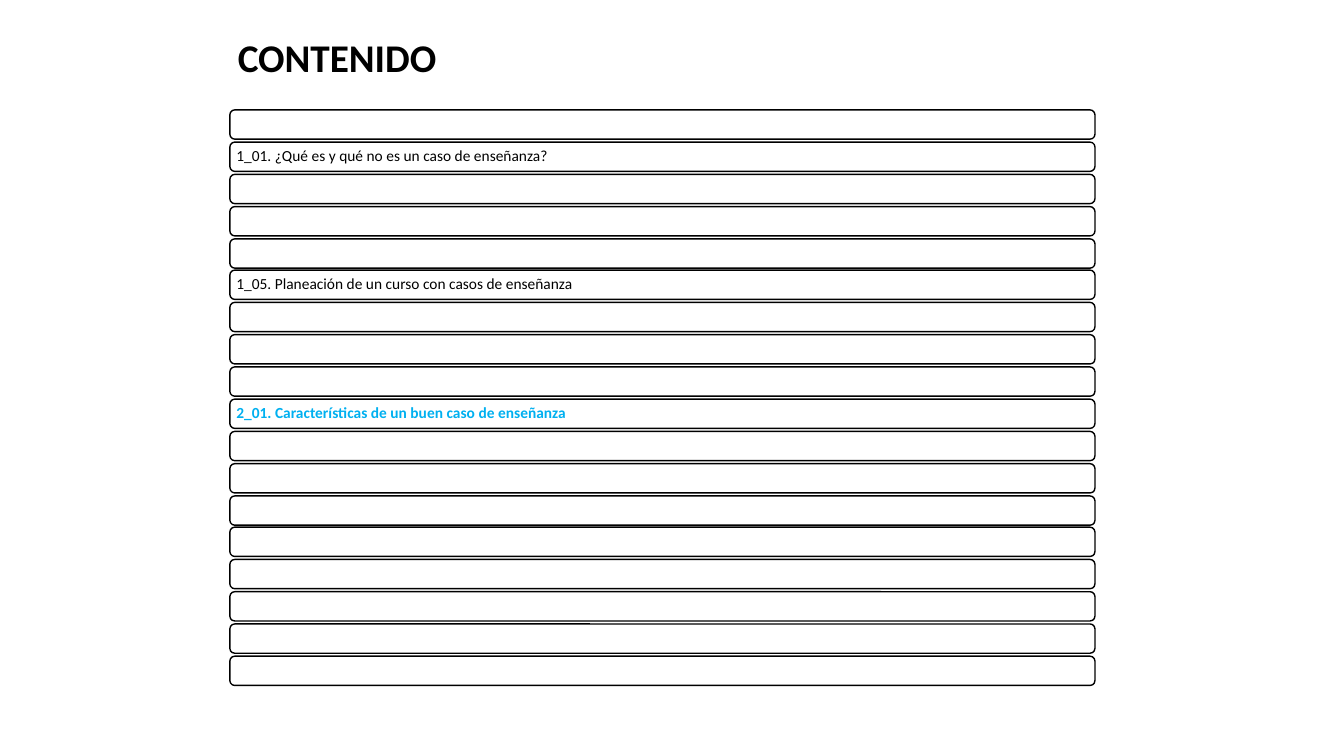
from pptx import Presentation
from pptx.dml.color import RGBColor
from pptx.enum.shapes import MSO_SHAPE as SHAPE
from pptx.enum.text import MSO_ANCHOR as ANCHOR, MSO_AUTO_SIZE as AUTO_SIZE, PP_ALIGN as ALIGN
from pptx.util import Pt

PX = 9144  # 100 px to the inch
COLORS = {"black": "000000", "white": "FFFFFF", "current": "00B0F0"}
ROWS = 18
FIRST_TOP, LAST_TOP = 109, 651
TOPICS = {
    1: ("1_01. ¿Qué es y qué no es un caso de enseñanza?", "black", False),
    5: ("1_05. Planeación de un curso con casos de enseñanza", "black", False),
    9: ("2_01. Características de un buen caso de enseñanza", "current", True),
}


def rgb(name):
    return RGBColor.from_string(COLORS[name])


def style_text(paragraph, size, color, bold):
    paragraph.alignment = ALIGN.LEFT
    for run in paragraph.runs:
        run.font.name = "Calibri"
        run.font.size = Pt(size)
        run.font.bold = bold
        run.font.color.rgb = rgb(color)


prs = Presentation()
prs.slide_width, prs.slide_height = 1333 * PX, 750 * PX
slide = prs.slides.add_slide(prs.slide_layouts[6])

# Contents rows, evenly spaced from first to last
for i in range(ROWS):
    top = FIRST_TOP + round(i * (LAST_TOP - FIRST_TOP) / (ROWS - 1))
    row = slide.shapes.add_shape(SHAPE.ROUNDED_RECTANGLE, 228 * PX, top * PX, 858 * PX, 29 * PX)
    row.shadow.inherit = False
    row.fill.solid()
    row.fill.fore_color.rgb = rgb("white")
    row.line.color.rgb = rgb("black")
    row.line.width = Pt(1)
    if i in TOPICS:
        topic, color, bold = TOPICS[i]
        frame = row.text_frame
        frame.margin_left = frame.margin_right = 5 * PX
        frame.margin_top = frame.margin_bottom = 5 * PX
        frame.vertical_anchor = ANCHOR.MIDDLE
        frame.text = topic
        frame.paragraphs[0].line_spacing = 0.9
        style_text(frame.paragraphs[0], 11, color, bold)

# Heading
heading = slide.shapes.add_textbox(226 * PX, 28 * PX, 219 * PX, 57 * PX).text_frame
heading.word_wrap = False
heading.auto_size = AUTO_SIZE.SHAPE_TO_FIT_TEXT
heading.text = "CONTENIDO"
style_text(heading.paragraphs[0], 28, "black", True)

prs.save("out.pptx")
